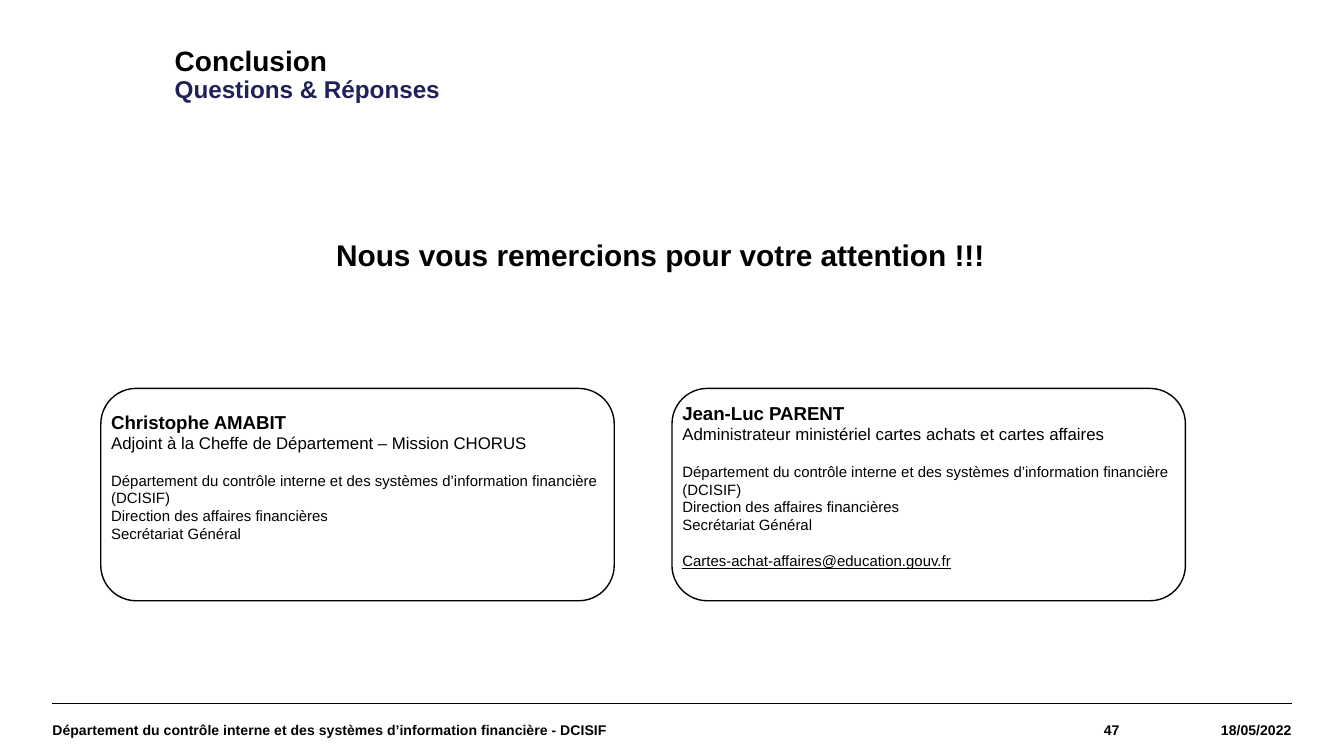
import pptx
import pptx.dml.color
import pptx.enum.shapes
import pptx.enum.text
import pptx.oxml.ns
import pptx.util
from lxml import etree

Inches, Pt = pptx.util.Inches, pptx.util.Pt
ALIGN = pptx.enum.text.PP_ALIGN
ANCHOR = pptx.enum.text.MSO_ANCHOR

# Content: lines are (text, size, bold, colour)
BLACK, WHITE, NAVY = "000000", "FFFFFF", "21215A"
TITLE = [("Conclusion", 15, True, BLACK), ("Questions & Réponses", 13, True, NAVY)]
THANKS = "Nous vous remercions pour votre attention !!!"
DEPARTMENT = "Département du contrôle interne et des systèmes d’information financière"
ADDRESS = [f"{DEPARTMENT} (DCISIF)", "Direction des affaires financières", "Secrétariat Général"]
CONTACTS = [
    {"name": "Christophe AMABIT",
     "role": "Adjoint à la Cheffe de Département – Mission CHORUS",
     "email": None, "lines_below": 2},
    {"name": "Jean-Luc PARENT",
     "role": "Administrateur ministériel cartes achats et cartes affaires",
     "email": "Cartes-achat-affaires@education.gouv.fr", "lines_below": 1},
]
# Footer cells: text, width, alignment
FOOTER = [
    (f"{DEPARTMENT} - DCISIF", 6.46, ALIGN.LEFT),
    ("47", 1.48, ALIGN.RIGHT),
    ("18/05/2022", 1.28, ALIGN.RIGHT),
]

# Layout: a 16:9 slide
WIDTH = 10
HEIGHT = WIDTH * 9 / 16
MARGIN = FOOTER_HEIGHT = 0.39
FOOTER_TOP = HEIGHT - FOOTER_HEIGHT
CARD_LEFT, CARD_TOP, CARD_PITCH = 0.75, 2.89, 4.25
CARD_WIDTH, CARD_HEIGHT = 3.82, 1.58
LINE_GAP = 9.6  # height of one 8 pt line

presentation = pptx.Presentation()
presentation.slide_width, presentation.slide_height = Inches(WIDTH), Inches(HEIGHT)
slide = presentation.slides.add_slide(presentation.slide_layouts[6])


def colour(value):
    return pptx.dml.color.RGBColor.from_string(value)


def write(shape, lines, align=ALIGN.LEFT, anchor=ANCHOR.MIDDLE, inset=0.0):
    frame = shape.text_frame
    frame.word_wrap = True
    frame.vertical_anchor = anchor
    frame.margin_left = frame.margin_right = Inches(inset)
    frame.margin_top = frame.margin_bottom = Inches(inset / 2)
    frame.text = "\n".join(line[0] for line in lines)
    for paragraph, (_, size, bold, value) in zip(frame.paragraphs, lines):
        paragraph.alignment = align
        font = paragraph.runs[0].font
        font.name, font.size, font.bold = "Arial", Pt(size), bold
        font.color.rgb = colour(value)
    return frame


def add_text(left, top, width, height, lines, **options):
    box = slide.shapes.add_textbox(Inches(left), Inches(top), Inches(width), Inches(height))
    return write(box, lines, **options)


def add_card(left, contact):
    card = slide.shapes.add_shape(
        pptx.enum.shapes.MSO_SHAPE.ROUNDED_RECTANGLE,
        Inches(left), Inches(CARD_TOP), Inches(CARD_WIDTH), Inches(CARD_HEIGHT))
    card.shadow.inherit = False
    card.fill.solid()
    card.fill.fore_color.rgb = colour(WHITE)
    card.line.color.rgb = colour(BLACK)
    card.line.width = Pt(0.75)
    lines = [(contact["name"], 10, True, BLACK), (contact["role"], 9, False, BLACK)]
    lines += [(text, 8, False, BLACK) for text in ADDRESS]
    if contact["email"]:
        lines.append((contact["email"], 8, False, BLACK))
    frame = write(card, lines)
    frame.margin_bottom = Pt(contact["lines_below"] * LINE_GAP)
    frame.paragraphs[2].space_before = Pt(LINE_GAP)
    if contact["email"]:
        email = frame.paragraphs[-1]
        email.space_before = Pt(LINE_GAP)
        email.runs[0].font.underline = True


# Footer rule and cells
rule = slide.shapes.add_connector(
    pptx.enum.shapes.MSO_CONNECTOR.STRAIGHT,
    Inches(MARGIN), Inches(FOOTER_TOP), Inches(WIDTH - MARGIN), Inches(FOOTER_TOP))
rule.line.color.rgb = colour(BLACK)
rule.line.width = Pt(0.8)
etree.SubElement(rule._element.spPr, pptx.oxml.ns.qn("a:effectLst"))

left = MARGIN
for text, width, align in FOOTER:
    add_text(left, FOOTER_TOP, width, FOOTER_HEIGHT, [(text, 7.5, True, BLACK)], align=align)
    left += width

# Title and subtitle
for paragraph in add_text(1.3, 0.17, 7.75, 0.79, TITLE).paragraphs:
    paragraph.line_spacing = 0.9

# Closing message
add_text(2.24, 1.71, 5.35, 1.18, [(THANKS, 16, True, BLACK)],
         align=ALIGN.CENTER, anchor=ANCHOR.TOP, inset=0.1)

# Contact cards
for column, contact in enumerate(CONTACTS):
    add_card(CARD_LEFT + column * CARD_PITCH, contact)

presentation.save("out.pptx")
